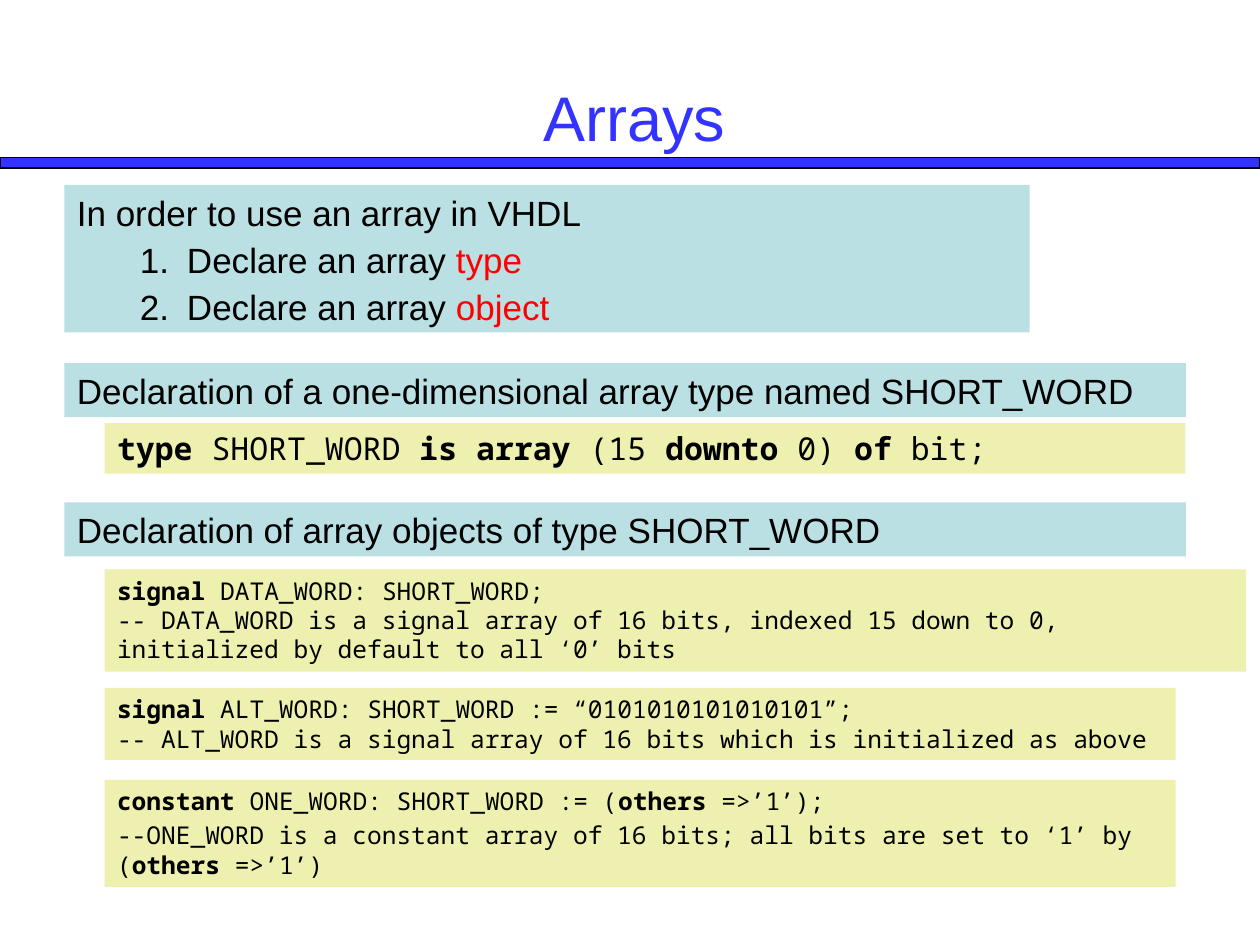
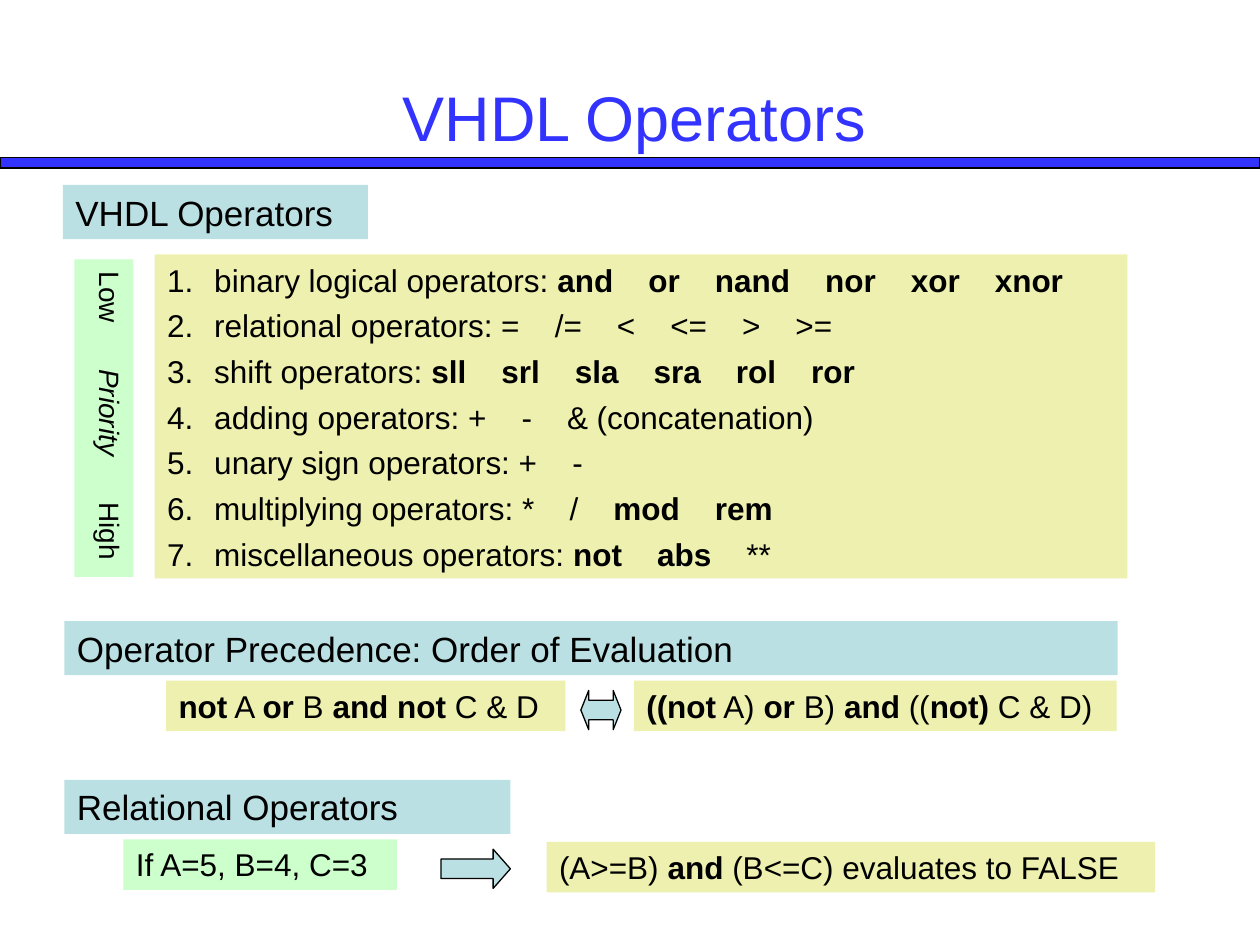
from dataclasses import dataclass

from lxml import etree
from pptx import Presentation
from pptx.dml.color import RGBColor
from pptx.enum.shapes import MSO_SHAPE
from pptx.enum.text import MSO_ANCHOR, PP_ALIGN
from pptx.oxml.ns import qn
from pptx.util import Cm, Pt

RECT = MSO_SHAPE.RECTANGLE
RIGHT_ARROW = MSO_SHAPE.RIGHT_ARROW
DOUBLE_ARROW = MSO_SHAPE.LEFT_RIGHT_ARROW
TOP, MIDDLE = MSO_ANCHOR.TOP, MSO_ANCHOR.MIDDLE
LEFT, CENTER = PP_ALIGN.LEFT, PP_ALIGN.CENTER

BLACK, BLUE, RED = "000000", "3333FF", "FF0000"
AQUA, SAND, MINT = "BBE0E3", "EDF0AE", "CCFFCC"
SANS, MONO = "Arial", "Noto Sans Mono"

HEADING_X, CODE_X = 1.3, 2.11
HEADING_H, LINE_H = 1.09, 1.02
HANGING = 0.95


@dataclass(frozen=True)
class Style:
    fill: str
    size: int
    font: str = SANS
    emphasis: str = "bold"
    space: float = 0
    margin: float = 0
    first_number: int | None = None
    gap: float = 15
    vert: str | None = None


HEADING = Style(AQUA, 20)
STEPS = Style(AQUA, 20, emphasis="red", space=3, margin=2.22, first_number=1)
TYPE_CODE = Style(SAND, 18, MONO)
CODE = Style(SAND, 14, MONO)
SPACED_CODE = Style(SAND, 14, MONO, space=2.8)
OPERATORS = Style(SAND, 18, space=4.5, margin=HANGING, first_number=0)
EXPRESSION = Style(SAND, 18)
CONDITION = Style(MINT, 18)
PRIORITY = Style(MINT, 16, emphasis="italic", gap=22, vert="eaVert")


@dataclass(frozen=True)
class Box:
    x: float
    y: float
    w: float
    h: float
    style: Style
    lines: tuple[str, ...]


@dataclass(frozen=True)
class Arrow:
    kind: int
    x: float
    y: float
    w: float
    h: float
    head: float


ARRAYS = [
    Box(HEADING_X, 3.73, 19.46, 2.97, STEPS, (
        "In order to use an array in VHDL",
        "Declare an array |type",
        "Declare an array |object")),
    Box(HEADING_X, 7.32, 22.61, HEADING_H, HEADING, (
        "Declaration of a one-dimensional array type named SHORT_WORD",)),
    Box(CODE_X, 8.53, 21.79, LINE_H, TYPE_CODE, (
        "|type| SHORT_WORD |is array| (15 |downto| 0) |of| bit;",)),
    Box(HEADING_X, 10.13, 22.61, HEADING_H, HEADING, (
        "Declaration of array objects of type SHORT_WORD",)),
    Box(CODE_X, 11.48, 23.01, 2.06, CODE, (
        "|signal| DATA_WORD: SHORT_WORD;",
        "-- DATA_WORD is a signal array of 16 bits, indexed 15 down to 0, "
        "initialized by default to all ‘0’ bits")),
    Box(CODE_X, 13.87, 21.59, 1.45, CODE, (
        "|signal| ALT_WORD: SHORT_WORD := “0101010101010101”;",
        "-- ALT_WORD is a signal array of 16 bits which is initialized as above")),
    Box(CODE_X, 15.72, 21.59, 2.16, SPACED_CODE, (
        "|constant| ONE_WORD: SHORT_WORD := (|others| =>’1’);",
        "--ONE_WORD is a constant array of 16 bits; all bits are set to ‘1’ by "
        "(|others| =>’1’)")),
]

VHDL_OPERATORS = [
    Box(1.27, 3.73, 6.15, HEADING_H, HEADING, ("VHDL Operators",)),
    Box(3.12, 5.13, 19.61, 6.53, OPERATORS, (
        "binary logical operators: |and~or~nand~nor~xor~xnor",
        "relational operators: =~/=~<~<=~>~>=",
        "shift operators: |sll~srl~sla~sra~rol~ror",
        "adding operators: +~-~& (concatenation)",
        "unary sign operators: +~-",
        "multiplying operators: *~/~|mod~rem",
        "miscellaneous operators: |not~abs|~**")),
    Box(1.5, 5.23, 1.19, 6.4, PRIORITY, ("Low~|Priority|~High",)),
    Box(HEADING_X, 12.52, 21.23, HEADING_H, HEADING, (
        "Operator Precedence: Order of Evaluation",)),
    Box(3.35, 13.72, 8.05, LINE_H, EXPRESSION, (
        "|not| A |or| B |and not| C & D",)),
    Arrow(DOUBLE_ARROW, 11.71, 13.92, 0.81, 0.79, 0.2),
    Box(12.78, 13.72, 9.73, LINE_H, EXPRESSION, (
        "|((not| A) |or| B) |and| ((|not)| C & D)",)),
    Box(HEADING_X, 15.72, 8.99, HEADING_H, HEADING, ("Relational Operators",)),
    Box(2.49, 16.92, 5.51, LINE_H, CONDITION, ("If A=5, B=4, C=3",)),
    Arrow(RIGHT_ARROW, 8.89, 17.12, 1.4, 0.79, 0.44),
    Box(11.02, 16.97, 12.27, LINE_H, EXPRESSION, (
        "(A>=B) |and| (B<=C) evaluates to FALSE",)),
]


def rgb(color: str) -> RGBColor:
    return RGBColor.from_string(color)


def add_text(p, text: str, *, font: str = SANS, size: float, color: str = BLACK,
             bold: bool = False, italic: bool = False, spacing: float = 0) -> None:
    r = p.add_run()
    r.text = text
    r.font.name = font
    r.font.size = Pt(size)
    r.font.bold = bold
    r.font.italic = italic
    r.font.color.rgb = rgb(color)
    if spacing:
        r._r.get_or_add_rPr().set("spc", str(round(spacing * 100)))


def add_marked_text(p, text: str, style: Style) -> None:
    for i, segment in enumerate(text.split("|")):
        emphasis = style.emphasis if i % 2 else ""
        look = dict(font=style.font, size=style.size, bold=emphasis == "bold",
                    italic=emphasis == "italic",
                    color=RED if emphasis == "red" else BLACK)
        for j, piece in enumerate(segment.split("~")):
            if j:
                add_text(p, " ", spacing=style.gap, **look)
            if piece:
                add_text(p, piece, **look)


def add_number(p, margin: float) -> None:
    pPr = p._p.get_or_add_pPr()
    pPr.set("marL", str(Cm(margin)))
    pPr.set("indent", str(-Cm(HANGING)))
    etree.SubElement(pPr, qn("a:buFont"), typeface="+mj-lt")
    etree.SubElement(pPr, qn("a:buAutoNum"), type="arabicPeriod")


def add_filled(s, kind: int, x: float, y: float, w: float, h: float, fill: str,
               outlined: bool = False):
    sp = s.shapes.add_shape(kind, Cm(x), Cm(y), Cm(w), Cm(h))
    sp.shadow.inherit = False
    sp.fill.solid()
    sp.fill.fore_color.rgb = rgb(fill)
    if outlined:
        sp.line.color.rgb = rgb(BLACK)
        sp.line.width = Pt(0.75)
    else:
        sp.line.fill.background()
    return sp


def add_box(s, box: Box) -> None:
    style = box.style
    tf = add_filled(s, RECT, box.x, box.y, box.w, box.h, style.fill).text_frame
    tf.word_wrap = True
    tf.vertical_anchor = TOP
    if style.vert:
        tf._txBody.bodyPr.set("vert", style.vert)
    for i, line in enumerate(box.lines):
        p = tf.add_paragraph() if i else tf.paragraphs[0]
        p.alignment = LEFT
        if i and style.space:
            p.space_before = Pt(style.space)
        if style.first_number is not None and i >= style.first_number:
            add_number(p, style.margin)
        add_marked_text(p, line, style)


def add_arrow(s, arrow: Arrow) -> None:
    sp = add_filled(s, arrow.kind, arrow.x, arrow.y, arrow.w, arrow.h, AQUA, True)
    sp.adjustments[0] = 0.5
    sp.adjustments[1] = arrow.head


def add_slide(prs, title: str, items: list[Box | Arrow]) -> None:
    s = prs.slides.add_slide(prs.slide_layouts[6])
    add_filled(s, RECT, 0, 3.17, 25.4, 0.22, BLUE, True)
    tf = s.shapes.add_textbox(Cm(1.07), Cm(0.76), Cm(23.44), Cm(3.17)).text_frame
    tf.word_wrap = True
    tf.vertical_anchor = MIDDLE
    p = tf.paragraphs[0]
    p.alignment = CENTER
    add_text(p, title, size=36, color=BLUE)
    for item in items:
        if isinstance(item, Box):
            add_box(s, item)
        else:
            add_arrow(s, item)


def main() -> None:
    prs = Presentation()
    prs.slide_width, prs.slide_height = Cm(25.4), Cm(19.05)
    add_slide(prs, "Arrays", ARRAYS)
    add_slide(prs, "VHDL Operators", VHDL_OPERATORS)
    prs.save("out.pptx")


if __name__ == "__main__":
    main()
